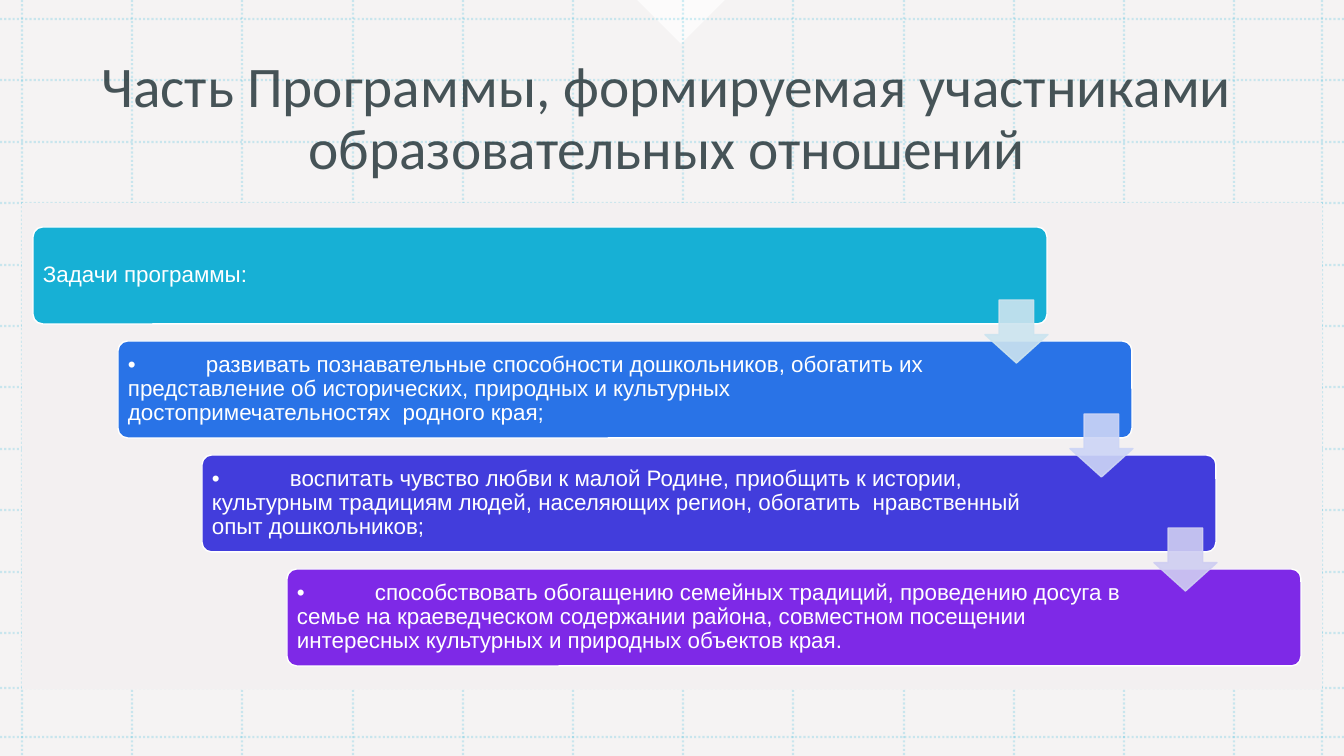
"""Build the slide on the programme part shaped by participants, with its staircase of tasks."""
from lxml.etree import SubElement
from pptx import Presentation
from pptx.dml.color import RGBColor
from pptx.enum.dml import MSO_LINE
from pptx.enum.shapes import MSO_CONNECTOR, MSO_SHAPE as SHAPE
from pptx.enum.text import MSO_ANCHOR as ANCHOR, PP_ALIGN as ALIGN
from pptx.oxml.ns import qn
from pptx.util import Pt

TITLE = "Часть Программы, формируемая участниками образовательных отношений"
TASKS = [
    ("Задачи программы:", "cyan", 902),
    ("•\tразвивать познавательные способности дошкольников, обогатить их представление об "
     "исторических, природных и культурных достопримечательностях  родного края;", "blue", 861),
    ("•\tвоспитать чувство любви к малой Родине, приобщить к истории, культурным традициям "
     "людей, населяющих регион, обогатить  нравственный опыт дошкольников;", "indigo", 861),
    ("•\tспособствовать обогащению семейных традиций, проведению досуга в семье на "
     "краеведческом содержании района, совместном посещении интересных культурных и "
     "природных объектов края.", "violet", 861),
]
ARROWS = ["arrow1", "arrow2", "arrow3"]
COLORS = {
    "white": "FFFFFF", "paper": "F3F0F1", "ink": "1B2C30",
    "cyan": "17B0D5", "blue": "2973E7", "indigo": "423DDC", "violet": "7E29E7",
    "arrow1": "CCE4EF", "arrow2": "CDD5F6", "arrow3": "CFCEF2",
}
W, H = 1344, 756
GRID_X = [22 + round(110.2 * i) for i in range(12)] + [1322]
GRID_Y = [19 + round(61.4 * i) for i in range(11)] + [688, 737]
BAR_X, BAR_Y, BAR_W, BAR_H = 33, 227, 1014, 97
STEP_X, STEP_Y = 84.7, 114
ARROW_DX, ARROW_DY, ARROW_SIZE = 952, 73, 63
TAB = 78


def px(n):
    return round(n * 914400 / 100.8)


def paint(fill, color, alpha=100):
    fill.solid()
    fill.fore_color.rgb = RGBColor.from_string(COLORS[color])
    if alpha < 100:
        clr = fill._xPr.find(qn("a:solidFill"))[0]
        SubElement(clr, qn("a:alpha"), val=str(alpha * 1000))


def add_box(shapes, kind, box, color, alpha=100, line=None):
    sp = shapes.add_shape(kind, *map(px, box))
    sp.shadow.inherit = False
    paint(sp.fill, color, alpha)
    if line:
        sp.line.width = Pt(1)
        paint(sp.line.fill, line, alpha)
    else:
        sp.line.fill.background()
    return sp


def add_grid_line(shapes, x1, y1, x2, y2):
    c = shapes.add_connector(MSO_CONNECTOR.STRAIGHT, *map(px, (x1, y1, x2, y2)))
    paint(c.line.fill, "cyan", 20)
    c.line.width = Pt(1.5)
    c.line.dash_style = MSO_LINE.ROUND_DOT
    SubElement(c._element.spPr, qn("a:effectLst"))


def write(tf, text, font, size, color, alpha=100):
    tf.word_wrap = True
    tf.vertical_anchor = ANCHOR.MIDDLE
    p = tf.paragraphs[0]
    p.line_spacing = 0.9
    r = p.add_run()
    r.text = text
    r.font.name, r.font.size = font, Pt(size)
    paint(r.font.fill, color, alpha)
    return p


def add_task(shapes, x, y, width, text):
    tf = shapes.add_textbox(*map(px, (x, y, width, BAR_H - 6))).text_frame
    tf.margin_left = tf.margin_right = tf.margin_top = tf.margin_bottom = px(7)
    p = write(tf, text, "Arial", 16, "white")
    tabs = SubElement(p._p.get_or_add_pPr(), qn("a:tabLst"))
    SubElement(tabs, qn("a:tab"), pos=str(px(TAB)), algn="l")


def main():
    prs = Presentation()
    prs.slide_width, prs.slide_height = px(W), px(H)
    s = prs.slides.add_slide(prs.slide_layouts[5])
    paint(s.background.fill, "white")

    add_box(s.shapes, SHAPE.RECTANGLE, (0, 0, W, H), "paper", 80)
    notch = add_box(s.shapes, SHAPE.RIGHT_TRIANGLE, (650, -31, 62, 62), "white", 75)
    notch.rotation = 315
    grid = s.shapes.add_group_shape().shapes
    for x in GRID_X:
        add_grid_line(grid, x, 0, x, H)
    for y in GRID_Y:
        add_grid_line(grid, 0, y, W, y)
    panel = add_box(s.shapes, SHAPE.RECTANGLE, (22, 203, 1300, 486), "paper")

    title = s.shapes.title
    title.left, title.top, title.width, title.height = map(px, (33, 37, 1268, 165))
    write(title.text_frame, TITLE, "Calibri", 41, "ink", 80).alignment = ALIGN.CENTER
    panel._element.addnext(title._element)

    stairs = s.shapes.add_group_shape().shapes
    corners = [(BAR_X + round(STEP_X * i), BAR_Y + STEP_Y * i) for i in range(len(TASKS))]
    for (x, y), (text, color, width) in zip(corners, TASKS):
        bar = add_box(stairs, SHAPE.ROUNDED_RECTANGLE, (x, y, BAR_W, BAR_H), color, line="white")
        bar.adjustments[0] = 0.1
        add_task(stairs, x + 3, y + 3, width, text)
    for (x, y), color in zip(corners, ARROWS):
        box = (x + ARROW_DX, y + ARROW_DY, ARROW_SIZE, ARROW_SIZE)
        arrow = add_box(stairs, SHAPE.DOWN_ARROW, box, color, 90, line=color)
        arrow.adjustments[0], arrow.adjustments[1] = 0.55, 0.45

    prs.save("out.pptx")


if __name__ == "__main__":
    main()
